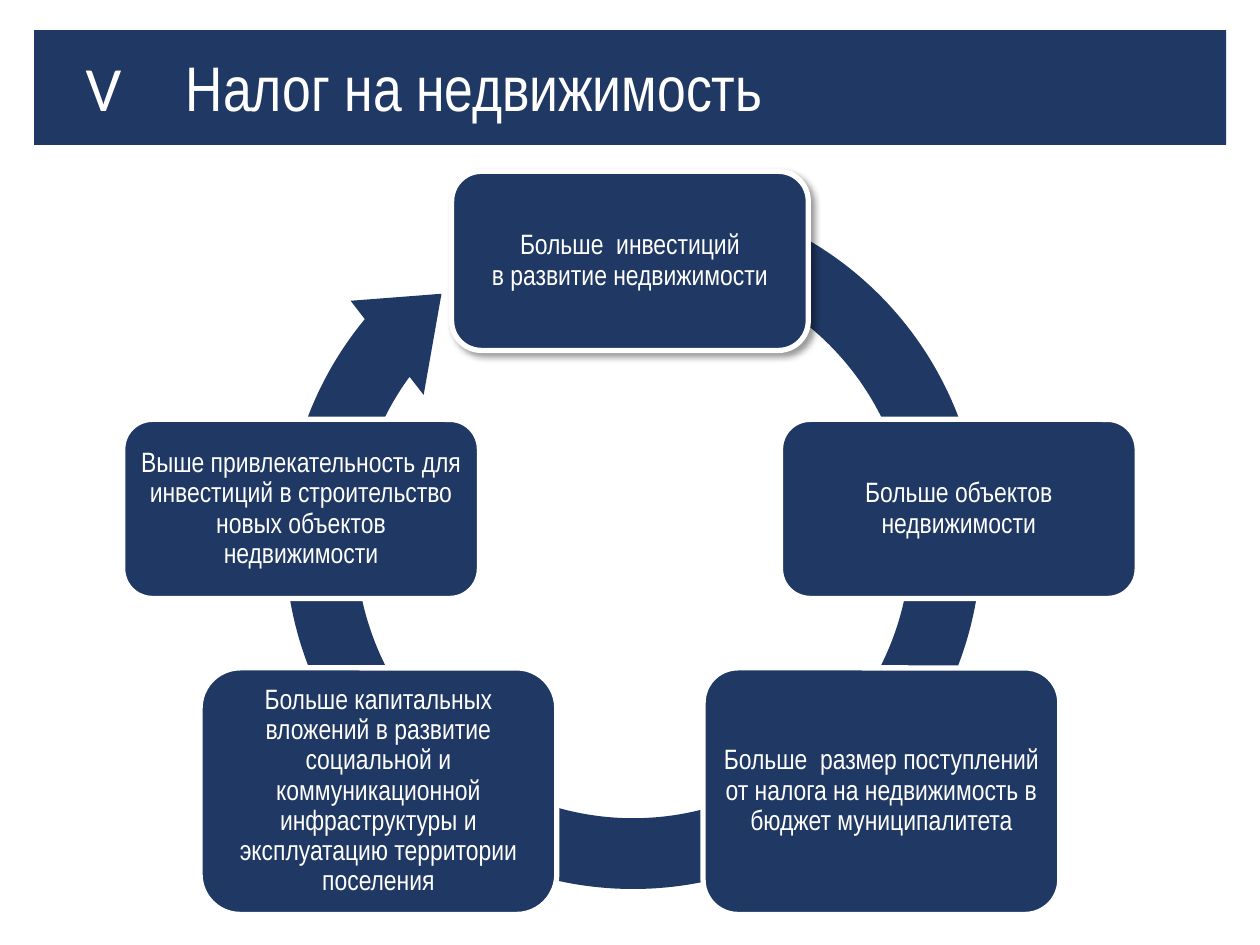
import pptx
import pptx.util
import pptx.oxml
import pptx.dml.color
import pptx.enum.shapes
import pptx.enum.text

Cm, Pt = pptx.util.Cm, pptx.util.Pt
KIND = pptx.enum.shapes.MSO_SHAPE
ALIGN = pptx.enum.text.PP_ALIGN
HUES = {"navy": "203864", "white": "FFFFFF", "black": "000000"}
NARROW = "Arial Narrow"

# Heading: text, left, width, font, alignment
HEADS = [
    ("V", 0.69, 2.79, "Calibri", ALIGN.CENTER),
    ("Налог на недвижимость", 3.5, 21.23, NARROW, ALIGN.LEFT),
]

# Steps clockwise: lines, offset from the axis, centre height, height, radius, inset
MID, WIDE = 12.7, 7.19
STEPS = [
    (["Больше  инвестиций", "в развитие недвижимости"], 0, 5.26, 3.61, 0.6, 0.18),
    (["Больше объектов недвижимости"], 6.63, 10.26, 3.61, 0.6, 0.18),
    (["Больше  размер поступлений от налога на недвижимость в бюджет муниципалитета"],
     5.07, 15.95, 4.97, 0.7, 0.15),
    (["Больше капитальных вложений в развитие социальной и коммуникационной "
      "инфраструктуры и эксплуатацию территории поселения"],
     -5.07, 15.95, 4.97, 0.81, 0.16),
    (["Выше привлекательность для инвестиций в строительство новых объектов недвижимости"],
     -6.63, 10.26, 3.61, 0.6, 0.18),
]
# Ring thickness, head sweep, head angle, start angle, head width
RING = (0.095, 8.45, 130.87, 176.99, 0.08)

SHADE = (
    '<a:effectLst xmlns:a="http://schemas.openxmlformats.org/drawingml/2006/main">'
    '<a:outerShdw blurRad="50800" dist="38100" dir="2700000" algn="tl" rotWithShape="0">'
    f'<a:srgbClr val="{HUES["black"]}"><a:alpha val="40000"/></a:srgbClr>'
    '</a:outerShdw></a:effectLst>'
)


def hue(name):
    return pptx.dml.color.RGBColor.from_string(HUES[name])


def shape(kind, left, top, width, height):
    item = slide.shapes.add_shape(kind, Cm(left), Cm(top), Cm(width), Cm(height))
    item.shadow.inherit = False
    item.fill.solid()
    item.fill.fore_color.rgb = hue("navy")
    item.line.fill.background()
    return item


def write(frame, lines, size, face, align, space=1.0):
    frame.word_wrap = True
    for i, line in enumerate(lines):
        par = frame.paragraphs[0] if i == 0 else frame.add_paragraph()
        par.text = line
        par.alignment = align
        par.line_spacing = space
        par.font.size, par.font.name = Pt(size), face
        par.font.color.rgb = hue("white")


deck = pptx.Presentation()
deck.slide_width, deck.slide_height = Cm(25.4), Cm(19.05)
slide = deck.slides.add_slide(deck.slide_layouts[6])

# Heading band
shape(KIND.RECTANGLE, 0.69, 0.61, 24.03, 2.31)
for text, left, width, face, align in HEADS:
    box = slide.shapes.add_textbox(Cm(left), Cm(0.86), Cm(width), Cm(1.8))
    write(box.text_frame, [text], 36, face, align)
    box.text_frame.auto_size = pptx.enum.text.MSO_AUTO_SIZE.SHAPE_TO_FIT_TEXT

# Ring arrow behind the steps
ring = shape(KIND.CIRCULAR_ARROW, 5.26, 3.4, 15.01, 15.01)
for i, value in enumerate(RING):
    ring.adjustments[i] = value

# Steps of the cycle
for i, (lines, shift, mid, high, bend, pad) in enumerate(STEPS):
    card = shape(KIND.ROUNDED_RECTANGLE, MID + shift - WIDE / 2, mid - high / 2, WIDE, high)
    card.adjustments[0] = bend / high
    card.line.color.rgb = hue("white")
    card.line.width = Pt(3)
    frame = card.text_frame
    frame.margin_left = frame.margin_right = Cm(pad)
    frame.margin_top = frame.margin_bottom = Cm(pad)
    frame.vertical_anchor = pptx.enum.text.MSO_ANCHOR.MIDDLE
    write(frame, lines, 16, NARROW, ALIGN.CENTER, 0.9)
    if i == 0:  # only the first step casts a shadow
        props = card.element.spPr
        props.replace(props.find(pptx.oxml.ns.qn("a:effectLst")), pptx.oxml.parse_xml(SHADE))

deck.save("out.pptx")
